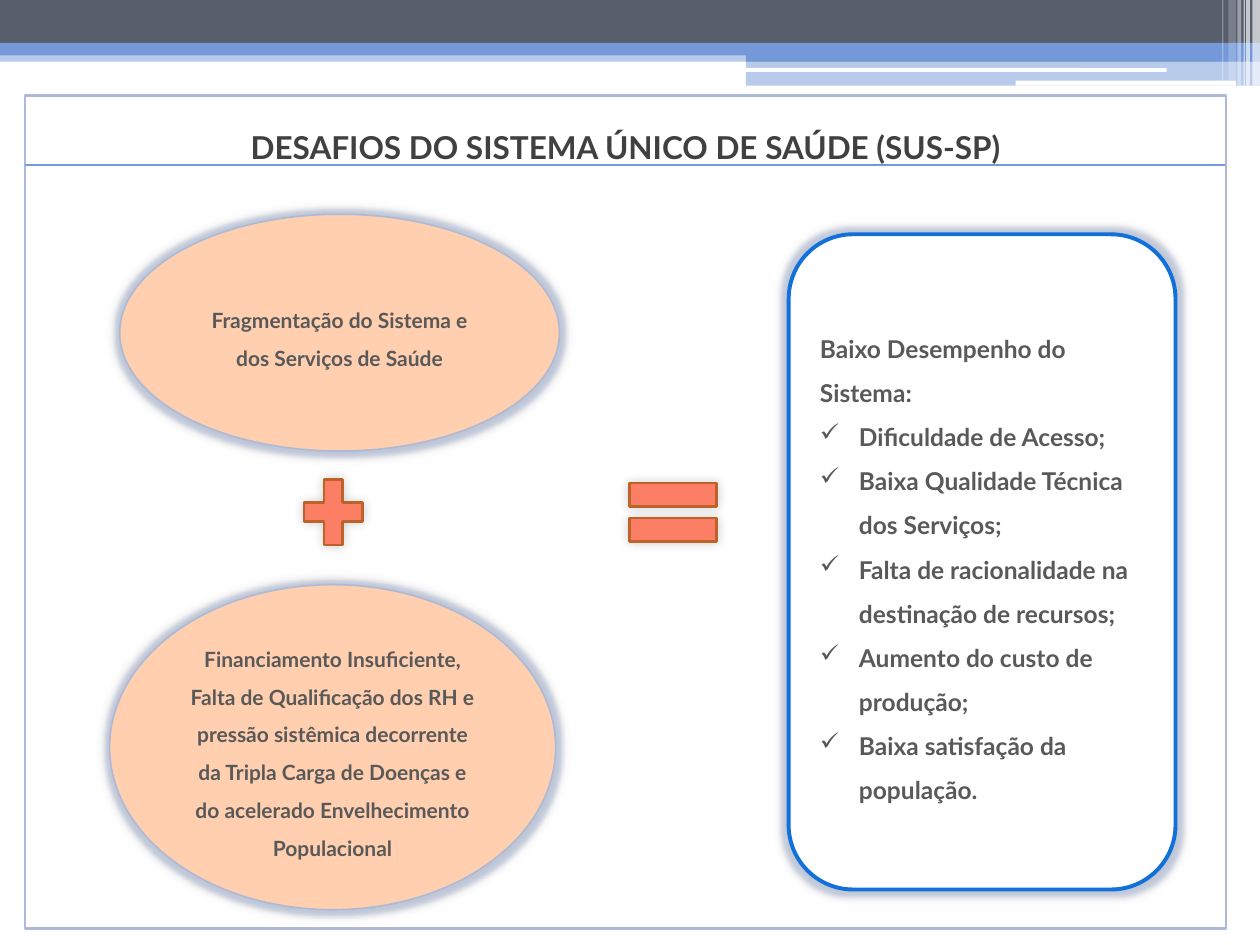
from lxml import etree
from pptx import Presentation
from pptx.dml.color import RGBColor
from pptx.enum.shapes import MSO_CONNECTOR, MSO_SHAPE
from pptx.enum.text import MSO_ANCHOR, PP_ALIGN
from pptx.oxml.ns import qn
from pptx.util import Inches, Pt

RECT, ROUNDED, OVAL = MSO_SHAPE.RECTANGLE, MSO_SHAPE.ROUNDED_RECTANGLE, MSO_SHAPE.OVAL
PLUS, EQUAL = MSO_SHAPE.MATH_PLUS, MSO_SHAPE.MATH_EQUAL
STRAIGHT = MSO_CONNECTOR.STRAIGHT
LEFT, CENTER = PP_ALIGN.LEFT, PP_ALIGN.CENTER
TOP, MIDDLE = MSO_ANCHOR.TOP, MSO_ANCHOR.MIDDLE

COLUMNS, ROWS = 100, 75
CELL = Inches(10) // COLUMNS
FONT = "Lato"
WHITE, SLATE, BLUE, PALE_BLUE = "FFFFFF", "575F6D", "7598D9", "AEBAD5"
PEACH, CORAL, RUST, STRONG_BLUE = "FFCFAF", "FB7E65", "BC6329", "1170D9"
TITLE_GRAY, TEXT_GRAY = "404040", "595959"

# Box in grid cells, colour, opacity in percent
HEADER_BANDS = [
    ((0, 4, 100, 0.9), BLUE, 50),
    ((0, 0, 100, 3.4), SLATE, 100),
    ((0, 3.4, 100, 1), BLUE, 100),
    ((59.2, 3.9, 40.8, 1), BLUE, 100),
    ((59.2, 4.8, 40.8, 2), BLUE, 50),
]
HEADER_GROOVES = [(59.1, 5.4, 33.5, 0.3), (80.6, 6.4, 17.5, 0.4)]
# Left, width, height, opacity
CORNER_STRIPES = [
    (99.4, 0.6, 6.8, 65), (98.9, 0.3, 6.8, 65), (98.7, 0.1, 6.8, 60),
    (98.2, 0.3, 6.8, 40), (97.5, 0.6, 6.4, 20), (97, 0.1, 6.4, 30),
]
CAUSES = [
    ((9.5, 17, 34.9, 18.8), "Fragmentação do Sistema e dos Serviços de Saúde"),
    ((8.7, 46.4, 35.4, 25.8),
     "Financiamento Insuficiente, Falta de Qualificação dos RH e pressão "
     "sistêmica decorrente da Tripla Carga de Doenças e do acelerado "
     "Envelhecimento Populacional"),
]
OPERATORS = [(PLUS, (23.3, 37.1, 6.3, 7.1)), (EQUAL, (48.7, 36.7, 9.4, 7.9))]
RESULT_HEADING = "Baixo Desempenho do Sistema:"
RESULTS = [
    "Dificuldade de Acesso;",
    "Baixa Qualidade Técnica dos Serviços;",
    "Falta de racionalidade na destinação de recursos;",
    "Aumento do custo de produção;",
    "Baixa satisfação da população.",
]


def cells(count):
    return round(count * CELL)


def color(hex_code):
    return RGBColor.from_string(hex_code)


def set_alpha(color_element, percent):
    etree.SubElement(color_element, qn("a:alpha"), val=str(percent * 1000))


def add_figure(slide, preset, box, fill, opacity=100, line=None, width=1.5):
    figure = slide.shapes.add_shape(preset, *map(cells, box))
    figure.shadow.inherit = False
    figure.fill.solid()
    figure.fill.fore_color.rgb = color(fill)
    if opacity < 100:
        set_alpha(figure.fill._xPr.find(".//" + qn("a:srgbClr")), opacity)
    if line:
        figure.line.color.rgb = color(line)
        figure.line.width = Pt(width)
    else:
        figure.line.fill.background()
    return figure


def add_effects(figure, halo=False):
    """Soft dark shadow, with a pale blue halo under it on request."""
    effects = figure._element.spPr.find(qn("a:effectLst"))
    if halo:
        glow = etree.SubElement(effects, qn("a:glow"), rad=str(Pt(5)))
        set_alpha(etree.SubElement(glow, qn("a:srgbClr"), val=PALE_BLUE), 60)
    shadow = etree.SubElement(effects, qn("a:outerShdw"), blurRad=str(Pt(6)),
                              dist="0", dir=str(225 * 60000), rotWithShape="0")
    set_alpha(etree.SubElement(shadow, qn("a:srgbClr"), val="000000"), 20)


def write(figure, lines, size, ink=TEXT_GRAY, align=CENTER, anchor=MIDDLE, spacing=1.5):
    frame = figure.text_frame
    frame.word_wrap = True
    frame.vertical_anchor = anchor
    for index, line in enumerate(lines):
        paragraph = frame.add_paragraph() if index else frame.paragraphs[0]
        paragraph.text = line
        paragraph.alignment = align
        paragraph.line_spacing = spacing
        paragraph.font.name = FONT
        paragraph.font.size = Pt(size)
        paragraph.font.bold = True
        paragraph.font.color.rgb = color(ink)
    return frame


def add_check_mark(paragraph):
    properties = paragraph._p.get_or_add_pPr()
    indent = Inches(0.31)
    properties.set("marL", str(indent))
    properties.set("indent", str(-indent))
    bullet = etree.Element(qn("a:buChar"), char="✓")
    properties.find(qn("a:defRPr")).addprevious(bullet)


def add_header(slide):
    for box, fill, opacity in HEADER_BANDS:
        add_figure(slide, RECT, box, fill, opacity)
    for box in HEADER_GROOVES:
        add_figure(slide, ROUNDED, box, WHITE)
    for left, width, height, opacity in CORNER_STRIPES:
        add_figure(slide, RECT, (left, 0, width, height), WHITE, opacity)


def add_titled_frame(slide):
    panel = add_figure(slide, RECT, (2, 7.6, 95.3, 66.1), WHITE, line=PALE_BLUE)
    frame = write(panel, ["DESAFIOS DO SISTEMA ÚNICO DE SAÚDE (SUS-SP)"], 18,
                  TITLE_GRAY, anchor=TOP, spacing=1)
    frame.margin_top = cells(2.6)


def add_title_rule(slide):
    rule = slide.shapes.add_connector(STRAIGHT, cells(2), cells(13.1), cells(97.2), cells(13.1))
    rule.line.color.rgb = color(BLUE)
    rule.line.width = Pt(1.5)
    etree.SubElement(rule._element.spPr, qn("a:effectLst"))


def add_equation(slide):
    for box, cause in CAUSES:
        oval = add_figure(slide, OVAL, box, PEACH, line=PALE_BLUE, width=0.94)
        add_effects(oval, halo=True)
        write(oval, [cause], 12)
    for preset, box in OPERATORS:
        add_effects(add_figure(slide, preset, box, CORAL, line=RUST))
    outcome = add_figure(slide, ROUNDED, (62.6, 18.6, 30.7, 52), WHITE,
                         line=STRONG_BLUE, width=2.25)
    add_effects(outcome, halo=True)
    frame = write(outcome, [RESULT_HEADING] + RESULTS, 14, align=LEFT)
    for paragraph in frame.paragraphs[1:]:
        add_check_mark(paragraph)


def main():
    deck = Presentation()
    deck.slide_width, deck.slide_height = cells(COLUMNS), cells(ROWS)
    slide = deck.slides.add_slide(deck.slide_layouts[6])
    add_header(slide)
    add_titled_frame(slide)
    add_equation(slide)
    add_title_rule(slide)
    deck.save("out.pptx")


if __name__ == "__main__":
    main()
